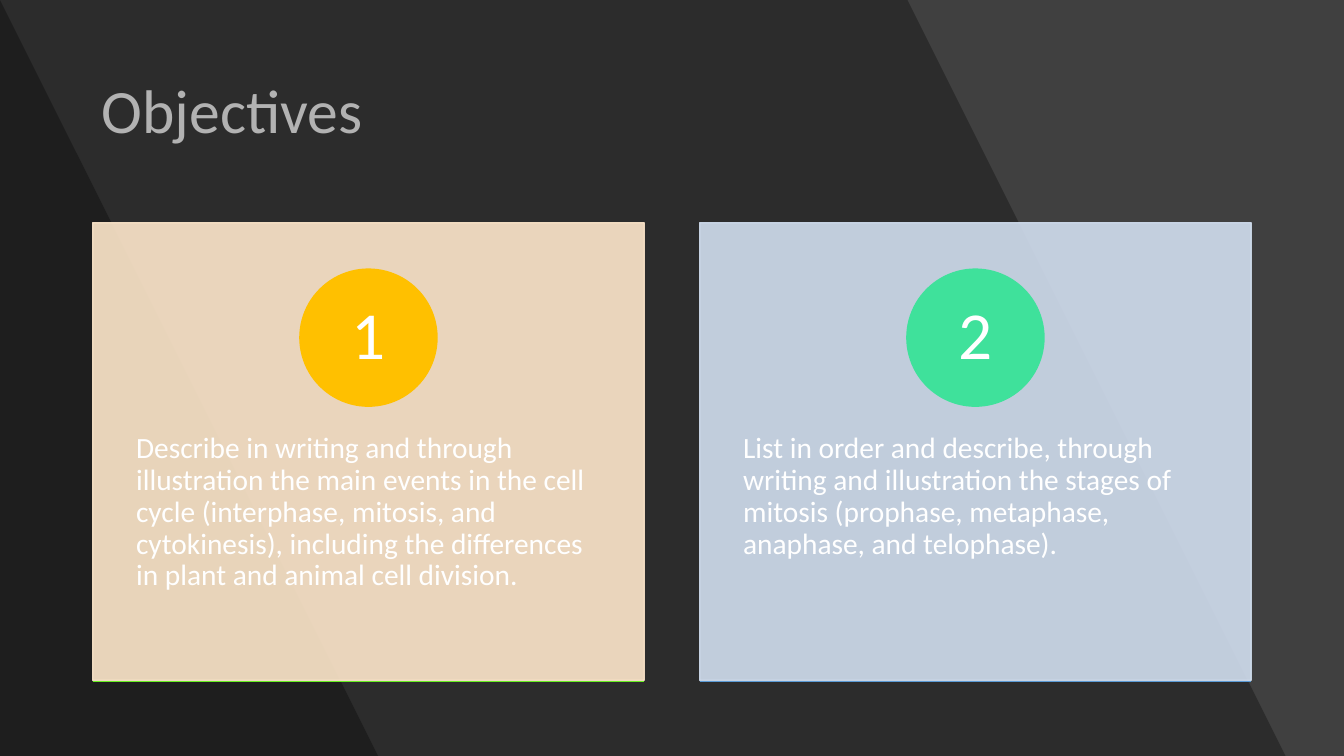
from lxml.etree import SubElement
from pptx import Presentation
from pptx.dml.color import RGBColor
from pptx.enum.shapes import MSO_CONNECTOR, MSO_SHAPE
from pptx.enum.text import MSO_ANCHOR, PP_ALIGN
from pptx.oxml.ns import qn
from pptx.util import Inches, Pt

COLORS = {
    "back": "404040", "shade": "000000", "text": "FFFFFF",
    "peach": "FFE8CC", "gold": "FFC000", "lime": "67EF21",
    "pale": "D2DFF0", "mint": "3FE19B", "blue": "5B9BD5",
}


def paint(shape, name, alpha=100, border=True):
    shape.shadow.inherit = False
    fills = [shape.fill]
    if border:
        shape.line.width = Pt(1)
        fills.append(shape.line.fill)
    else:
        shape.line.fill.background()
    for fill in fills:
        fill.solid()
        fill.fore_color.rgb = RGBColor.from_string(COLORS[name])
    if alpha < 100:
        for color in shape._element.spPr.iter(qn("a:srgbClr")):
            SubElement(color, qn("a:alpha"), val=str(alpha * 1000))


def write(shape, text, size, align, anchor, inset):
    frame = shape.text_frame
    frame.text = text
    frame.word_wrap = True
    frame.vertical_anchor = anchor
    frame.margin_left = frame.margin_right = Inches(inset[0])
    frame.margin_top = frame.margin_bottom = Inches(inset[1])
    para = frame.paragraphs[0]
    para.alignment = align
    para.line_spacing = 0.9
    font = para.runs[0].font
    font.name = "Calibri"
    font.size = Pt(size)
    font.color.rgb = RGBColor.from_string(COLORS["text"])


deck = Presentation()
deck.slide_width = Inches(13.33)
deck.slide_height = Inches(7.5)
slide = deck.slides.add_slide(deck.slide_layouts[5])
slide.background.fill.solid()
slide.background.fill.fore_color.rgb = RGBColor.from_string(COLORS["back"])
shapes = slide.shapes

for top, base in [(9.42, 12.89), (0.44, 3.92)]:
    form = shapes.build_freeform(0, 0, scale=Inches(1))
    form.add_line_segments([(top, 0), (base, 7.5), (0, 7.5)], close=True)
    paint(form.convert_to_shape(), "shade", 30, border=False)

title = shapes.title
title.left, title.top = Inches(0.91), Inches(0.4)
title.width, title.height = Inches(11.51), Inches(1.45)
write(title, "Objectives", 44, PP_ALIGN.LEFT, MSO_ANCHOR.MIDDLE, (0.1, 0.05))

goals = [
    ("Describe in writing and through illustration the main events in the cell "
     "cycle (interphase, mitosis, and cytokinesis), including the differences "
     "in plant and animal cell division.", "peach", "gold", "lime"),
    ("List in order and describe, through writing and illustration the stages "
     "of mitosis (prophase, metaphase, anaphase, and telophase).",
     "pale", "mint", "blue"),
]
WIDE, STEP, DISC = 5.47, 6.02, 1.36

for index, (goal, tint, badge, edge) in enumerate(goals):
    left = 0.92 + index * STEP
    card = shapes.add_shape(MSO_SHAPE.RECTANGLE, Inches(left), Inches(2.21),
                            Inches(WIDE), Inches(4.54))
    paint(card, tint, 90)

    body = shapes.add_textbox(Inches(left), Inches(3.94), Inches(WIDE), Inches(2.73))
    write(body, goal, 21, PP_ALIGN.LEFT, MSO_ANCHOR.TOP, (0.43, 0.36))

    disc = shapes.add_shape(MSO_SHAPE.OVAL, Inches(left + (WIDE - DISC) / 2),
                            Inches(2.67), Inches(DISC), Inches(DISC))
    paint(disc, badge)
    write(disc, str(index + 1), 48, PP_ALIGN.CENTER, MSO_ANCHOR.MIDDLE, (0.11, 0.01))

    rule = shapes.add_connector(MSO_CONNECTOR.STRAIGHT, Inches(left), Inches(6.76),
                                Inches(left + WIDE), Inches(6.76))
    rule.line.width = Pt(1)
    rule.line.color.rgb = RGBColor.from_string(COLORS[edge])
    SubElement(rule._element.spPr, qn("a:effectLst"))

deck.save("out.pptx")
